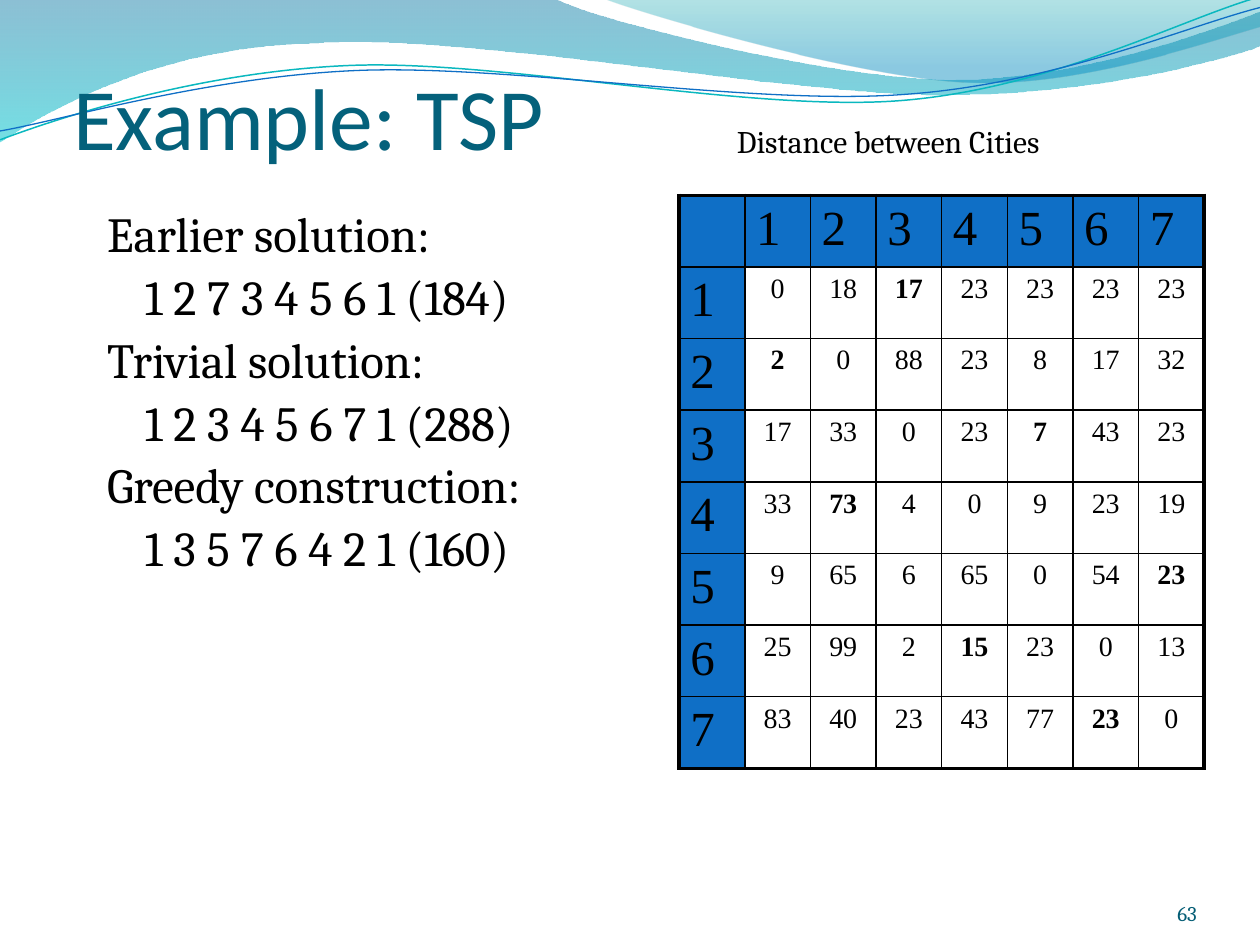
from itertools import pairwise
from math import cos, radians, sin

from lxml.etree import SubElement
from pptx import Presentation
from pptx.dml.color import RGBColor
from pptx.enum.text import MSO_ANCHOR as Anchor, MSO_AUTO_SIZE as AutoSize, PP_ALIGN as Align
from pptx.oxml.ns import qn
from pptx.util import Inches, Pt

BLACK, BLUE = "000000", "0F6FC6"
SERIF, TABLE_FONT = "Cambria", "Times New Roman"
STRAND_TILT = 2.7
GREEDY_TOUR = "1 3 5 7 6 4 2 1"
SOLUTIONS = [
    "Earlier solution:", "\t1 2 7 3 4 5 6 1 (184)",
    "Trivial solution:", "\t1 2 3 4 5 6 7 1 (288)",
    "Greedy construction:", f"\t{GREEDY_TOUR} (160)",
]
DISTANCES = [
    [0, 18, 17, 23, 23, 23, 23],
    [2, 0, 88, 23, 8, 17, 32],
    [17, 33, 0, 23, 7, 43, 23],
    [33, 73, 4, 0, 9, 23, 19],
    [9, 65, 6, 65, 0, 54, 23],
    [25, 99, 2, 15, 23, 0, 13],
    [83, 40, 23, 43, 77, 23, 0],
]
WAVES = [
    ([[(0, 0)], [(4.4, -0.01)], [(4.76, 0.17), (6.64, 0.63), (7.58, 0.63)],
      [(8.53, 0.63), (9.58, 0.26), (10, 0.09)], [(10.01, 0.36)],
      [(9.83, 0.44), (8.7, 0.76), (7.46, 0.75)],
      [(6.22, 0.75), (3.82, 0.28), (2.57, 0.34)],
      [(1.29, 0.36), (0.46, 0.83), (-0.01, 1.13)], [(0, 0)]],
     [(0, "0074A1", 45), (1, "00C6CF", 55)]),
    ([[(4.79, -0.01)], [(5.09, 0.11), (6.82, 0.62), (7.69, 0.65)],
      [(8.56, 0.69), (9.61, 0.32), (10, 0.21)], [(10, 0)], [(4.79, -0.01)]],
     [(0, "00A1A9", 30), (0.8, "008BBF", 45)]),
]
STRANDS = [
    ([[(0, 1.11)], [(0.48, 0.93), (1.58, 0.57), (2.77, 0.52)],
      [(3.95, 0.47), (5.93, 0.89), (7.13, 0.8)],
      [(8.33, 0.71), (9.38, 0.15), (9.98, -0.02)]],
     (4.99, 0.58), "0AB8BF", 0.85),
    ([[(0, 1.04)], [(0.47, 0.96), (1.64, 0.61), (2.83, 0.56)],
      [(4.03, 0.51), (5.97, 0.84), (7.17, 0.75)],
      [(8.36, 0.67), (9.41, 0.21), (10, 0.06)]],
     (5, 0.59), BLUE, 0.75),
]


def rgb(value):
    return RGBColor.from_string(value)


def add_curve(slide, segments, close):
    steps = [[(Inches(x), Inches(y)) for x, y in segment] for segment in segments]
    builder = slide.shapes.build_freeform(*steps[0][0])
    builder.add_line_segments([step[-1] for step in steps[1:]], close=close)
    curve = builder.convert_to_shape()
    curve.shadow.inherit = False
    for line, step in zip(list(curve._element.iter(qn("a:lnTo"))), steps[1:]):
        if len(step) == 3:
            line.tag = qn("a:cubicBezTo")
            line.clear()
            for x, y in step:
                SubElement(line, qn("a:pt"), x=str(x - curve.left), y=str(y - curve.top))
    return curve


def add_wave(slide, segments, stops):
    wave = add_curve(slide, segments, True)
    wave.line.fill.background()
    wave.fill.gradient()
    wave.fill.gradient_angle = 270
    for stop, (position, color, _) in zip(wave.fill.gradient_stops, stops):
        stop.position = position
        stop.color.rgb = rgb(color)
    for tint, (_, _, opacity) in zip(wave._element.spPr.iter(qn("a:srgbClr")), stops):
        SubElement(tint, qn("a:alpha"), val=str(opacity * 1000))


def turn(point, center, degrees):
    dx, dy = point[0] - center[0], point[1] - center[1]
    c, s = cos(radians(degrees)), sin(radians(degrees))
    return center[0] + dx * c - dy * s, center[1] + dx * s + dy * c


def add_strand(slide, segments, center, color, width):
    level = [[turn(point, center, STRAND_TILT) for point in segment] for segment in segments]
    strand = add_curve(slide, level, False)
    strand.rotation = 360 - STRAND_TILT
    strand.fill.background()
    strand.line.color.rgb = rgb(color)
    strand.line.width = Pt(width)


def add_run(paragraph, text, size, font, color, bold=False):
    run = paragraph.add_run()
    run.text = text
    run.font.size = Pt(size)
    run.font.name = font
    run.font.bold = bold
    run.font.color.rgb = rgb(color)


def place(holder, left, top, width, height):
    holder.left, holder.top = Inches(left), Inches(top)
    holder.width, holder.height = Inches(width), Inches(height)
    holder._element.getparent().append(holder._element)


def set_frame(frame, anchor, margins):
    frame.word_wrap = True
    frame.auto_size = AutoSize.NONE
    frame.vertical_anchor = anchor
    sides = [Inches(margin) for margin in margins]
    frame.margin_left, frame.margin_top, frame.margin_right, frame.margin_bottom = sides


def fill_title(title):
    place(title, 0.58, 0.08, 9, 1.25)
    set_frame(title.text_frame, Anchor.BOTTOM, (0, 0.05, 0, 0))
    heading = title.text_frame.paragraphs[0]
    heading.alignment = Align.LEFT
    add_run(heading, "Example: TSP", 50, "Calibri", "04617B")


def fill_solutions(body):
    place(body, 0.75, 1.62, 4.57, 3.86)
    frame = body.text_frame
    set_frame(frame, Anchor.TOP, (0.1, 0.05, 0.1, 0.05))
    for index, text in enumerate(SOLUTIONS):
        line = frame.add_paragraph() if index else frame.paragraphs[0]
        line.line_spacing = 0.9
        line.space_before = Pt(5.6)
        properties = line._p.get_or_add_pPr()
        properties.set("marL", str(Inches(0.3)))
        properties.set("indent", str(Inches(-0.3)))
        SubElement(properties, qn("a:buNone"))
        add_run(line, text, 28, SERIF, BLACK)


def add_label(slide, text, bounds, size, color, anchor, margins, alignment):
    label = slide.shapes.add_textbox(*map(Inches, bounds))
    set_frame(label.text_frame, anchor, margins)
    paragraph = label.text_frame.paragraphs[0]
    paragraph.alignment = alignment
    add_run(paragraph, text, size, SERIF, color)


def set_borders(cell, widths):
    properties = cell._tc.get_or_add_tcPr()
    for index, (side, width) in enumerate(zip("LRTB", widths)):
        border = SubElement(properties, qn(f"a:ln{side}"), w=str(Pt(width)))
        fill = SubElement(border, qn("a:solidFill"))
        SubElement(fill, qn("a:srgbClr"), val=BLACK)
        properties.insert(index, border)


def add_distances(slide):
    cities = [str(city) for city in range(1, len(DISTANCES) + 1)]
    rows = [["", *cities]] + [[city, *map(str, row)] for city, row in zip(cities, DISTANCES)]
    tour_legs = set(pairwise(map(int, GREEDY_TOUR.split())))
    last = len(cities)
    table = slide.shapes.add_table(
        last + 1, last + 1, Inches(5.39), Inches(1.55), Inches(4.17), Inches(4.55)
    ).table
    table.first_row = table.horz_banding = False
    for r, row in enumerate(rows):
        for c, text in enumerate(row):
            cell = table.cell(r, c)
            header = r == 0 or c == 0
            if header:
                cell.fill.solid()
                cell.fill.fore_color.rgb = rgb(BLUE)
            else:
                cell.fill.background()
            outer = (c == 0, c == last, r == 0, r == last)
            set_borders(cell, [2.25 if edge else 1 for edge in outer])
            cell.margin_left = cell.margin_right = Inches(0.09)
            cell.margin_top = cell.margin_bottom = Inches(0.05)
            if text:
                size = 28 if header else 16
                entry = cell.text_frame.paragraphs[0]
                entry.alignment = Align.LEFT if header else Align.CENTER
                entry.space_before = Pt(size * 0.2)
                add_run(entry, text, size, TABLE_FONT, BLACK, (r, c) in tour_legs)


def main():
    deck = Presentation()
    deck.slide_width, deck.slide_height = Inches(10), Inches(7.5)
    slide = deck.slides.add_slide(deck.slide_layouts[1])
    for wave in WAVES:
        add_wave(slide, *wave)
    for strand in STRANDS:
        add_strand(slide, *strand)
    fill_title(slide.shapes.title)
    fill_solutions(slide.placeholders[1])
    add_distances(slide)
    add_label(slide, "63", (8.67, 6.95, 0.83, 0.4), 12, "045D75",
              Anchor.BOTTOM, (0, 0, 0, 0), Align.RIGHT)
    add_label(slide, "Distance between Cities", (5.75, 0.92, 3.5, 0.4), 18, BLACK,
              Anchor.TOP, (0.1, 0.05, 0.1, 0.05), Align.LEFT)
    deck.save("out.pptx")


if __name__ == "__main__":
    main()
